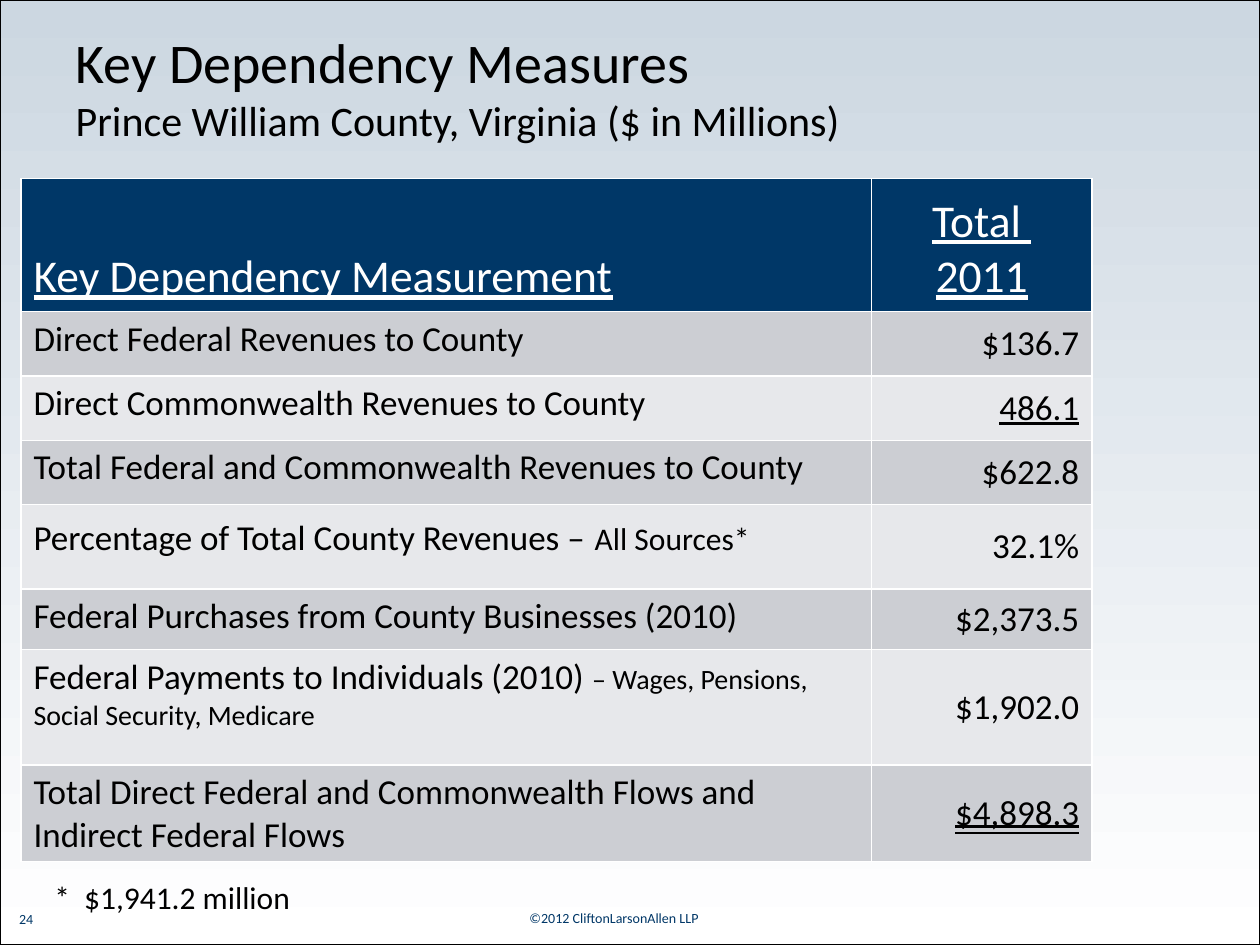
from dataclasses import dataclass

from pptx import Presentation
from pptx.dml.color import RGBColor
from pptx.enum.shapes import MSO_SHAPE
from pptx.enum.text import MSO_ANCHOR, MSO_AUTO_SIZE, MSO_UNDERLINE, PP_ALIGN
from pptx.util import Pt

LEFT, CENTER, RIGHT = PP_ALIGN.LEFT, PP_ALIGN.CENTER, PP_ALIGN.RIGHT
TOP, MIDDLE, BOTTOM = MSO_ANCHOR.TOP, MSO_ANCHOR.MIDDLE, MSO_ANCHOR.BOTTOM
SINGLE, DOUBLE = MSO_UNDERLINE.SINGLE_LINE, MSO_UNDERLINE.DOUBLE_LINE

FONT = "Calibri"
NAVY = RGBColor(0x00, 0x37, 0x67)
BLACK = RGBColor(0x00, 0x00, 0x00)
WHITE = RGBColor(0xFF, 0xFF, 0xFF)
SKY = RGBColor(0xCC, 0xD7, 0xE1)
BAND_DARK = RGBColor(0xCC, 0xCE, 0xD3)
BAND_LIGHT = RGBColor(0xE7, 0xE8, 0xEB)


@dataclass
class Run:
    text: str
    size: float | None = None


@dataclass
class Measure:
    label: list[Run]
    value: str
    height: float
    underline: MSO_UNDERLINE | None = None


HEADER_HEIGHT = 76
COL_WIDTHS = (486, 126)
MEASURES = [
    Measure([Run("Direct Federal Revenues to County")], "$136.7", 36.8),
    Measure([Run("Direct Commonwealth Revenues to County")], "486.1", 36.8, SINGLE),
    Measure([Run("Total Federal and Commonwealth Revenues to County")], "$622.8", 36.8),
    Measure([Run("Percentage of Total County Revenues –"), Run(" ", 24),
             Run("All Sources*", 18)], "32.1%", 48.3),
    Measure([Run("Federal Purchases from County Businesses (2010)")], "$2,373.5", 34.5),
    Measure([Run("Federal Payments to Individuals (2010) "),
             Run("– Wages, Pensions, Social Security, Medicare", 16)], "$1,902.0", 66),
    Measure([Run("Total Direct Federal and Commonwealth Flows and Indirect Federal Flows")],
            "$4,898.3", 55, DOUBLE),
]


def write(p, runs: list[Run], size: float, color: RGBColor, align=LEFT, underline=None) -> None:
    """Fill a paragraph; runs may override its size."""
    p.alignment = align
    p.font.name, p.font.size, p.font.bold = FONT, Pt(size), False
    p.font.color.rgb = color
    for run in runs:
        r = p.add_run()
        r.text = run.text
        r.font.bold = False
        r.font.color.rgb = color
        if run.size:
            r.font.size = Pt(run.size)
        if underline:
            r.font.underline = underline


def fill_cell(cell, paragraphs: list[list[Run]], size: float, color: RGBColor,
              fill: RGBColor, anchor, align=LEFT, underline=None) -> None:
    cell.fill.solid()
    cell.fill.fore_color.rgb = fill
    cell.vertical_anchor = anchor
    tf = cell.text_frame
    for i, runs in enumerate(paragraphs):
        p = tf.add_paragraph() if i else tf.paragraphs[0]
        write(p, runs, size, color, align, underline)


def add_label(s, text: str, left: float, top: float, width: float, height: float,
              size: float, color: RGBColor, align=LEFT):
    tf = s.shapes.add_textbox(Pt(left), Pt(top), Pt(width), Pt(height)).text_frame
    tf.word_wrap = True
    write(tf.paragraphs[0], [Run(text)], size, color, align)
    return tf.paragraphs[0]


def add_frame(s, prs) -> None:
    sp = s.shapes.add_shape(MSO_SHAPE.RECTANGLE, 0, 0, prs.slide_width, prs.slide_height)
    sp.shadow.inherit = False
    sp.fill.background()
    sp.line.color.rgb = BLACK
    sp.line.width = Pt(0.75)


def set_title(s) -> None:
    sp = s.shapes.title
    sp.left, sp.top, sp.width, sp.height = Pt(36), Pt(12), Pt(648), Pt(54)
    tf = sp.text_frame
    tf.auto_size = MSO_AUTO_SIZE.NONE
    tf.vertical_anchor = TOP
    p = tf.paragraphs[0]
    write(p, [Run("Key Dependency Measures")], 32, BLACK)
    p.add_line_break()
    write(p, [Run("Prince William County, Virginia ($ in Millions)", 24)], 32, BLACK)


def add_measures(s) -> None:
    heights = [HEADER_HEIGHT] + [m.height for m in MEASURES]
    table = s.shapes.add_table(len(heights), len(COL_WIDTHS), Pt(12), Pt(102),
                               Pt(sum(COL_WIDTHS)), Pt(sum(heights))).table
    for column, width in zip(table.columns, COL_WIDTHS):
        column.width = Pt(width)
    for row, height in zip(table.rows, heights):
        row.height = Pt(height)

    # Header row
    fill_cell(table.cell(0, 0), [[Run("Key Dependency Measurement")]],
              26, WHITE, NAVY, BOTTOM, LEFT, SINGLE)
    fill_cell(table.cell(0, 1), [[Run("Total ")], [Run("2011")]],
              26, WHITE, NAVY, BOTTOM, CENTER, SINGLE)

    # Banded body rows
    for i, m in enumerate(MEASURES, start=1):
        band = BAND_DARK if i % 2 else BAND_LIGHT
        fill_cell(table.cell(i, 0), [m.label], 20, BLACK, band, TOP)
        fill_cell(table.cell(i, 1), [[Run(m.value)]], 20, BLACK, band, MIDDLE,
                  RIGHT, m.underline)


def main() -> None:
    prs = Presentation()
    prs.slide_width, prs.slide_height = Pt(720), Pt(540)
    s = prs.slides.add_slide(prs.slide_layouts[5])

    # Background fading downwards
    fill = s.background.fill
    fill.gradient()
    fill.gradient_angle = 270
    for stop, color in zip(fill.gradient_stops, (SKY, WHITE)):
        stop.color.rgb = color

    # Footer and frame
    add_label(s, "©2012 CliftonLarsonAllen LLP", 294, 516, 114, 17, 8, NAVY, CENTER)
    add_label(s, "24", 0, 517, 30, 17, 8, NAVY, CENTER)
    add_frame(s, prs)

    # Title, table and footnote
    set_title(s)
    add_measures(s)
    note = add_label(s, "*\t$1,941.2 million", 24, 498, 192, 29, 18, BLACK)
    pPr = note._p.get_or_add_pPr()
    pPr.set("marL", str(Pt(17)))
    pPr.set("indent", str(-Pt(17)))

    prs.save("out.pptx")


if __name__ == "__main__":
    main()
